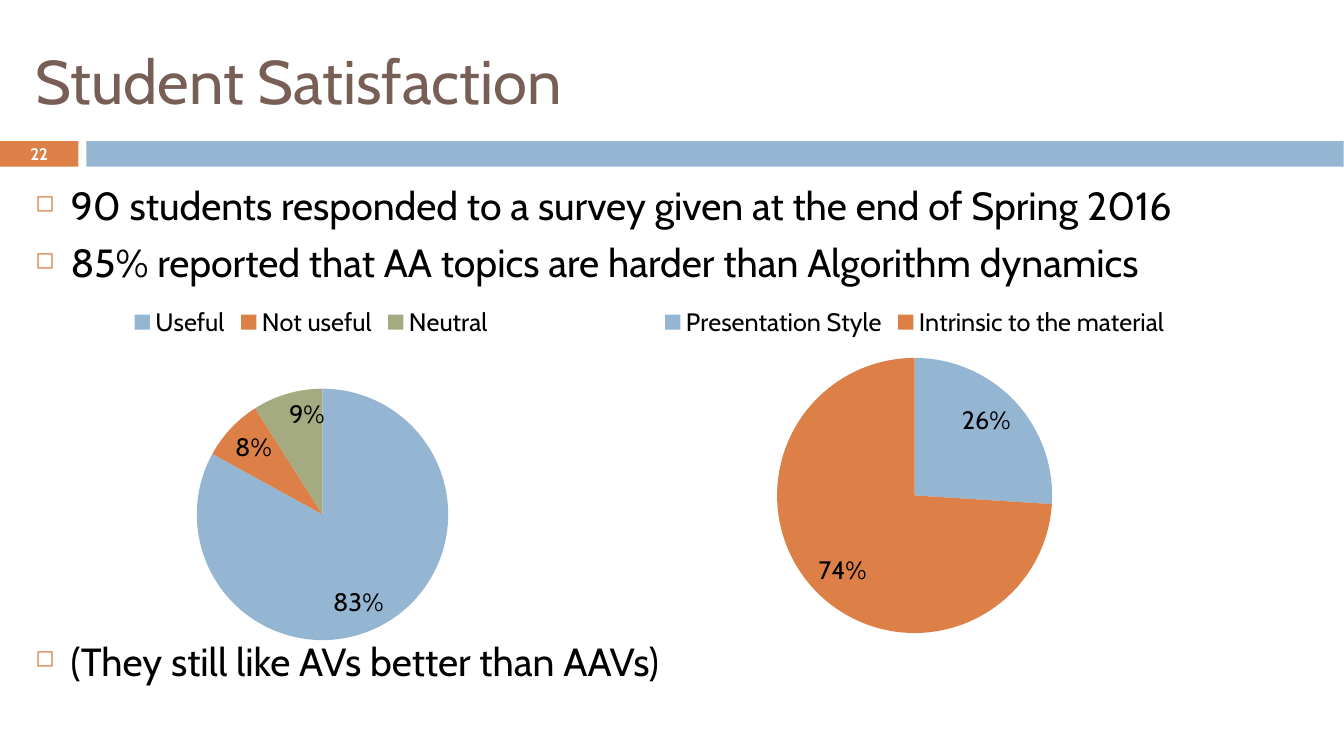
from lxml.etree import SubElement
from pptx import Presentation
from pptx.chart.data import CategoryChartData
from pptx.dml.color import RGBColor
from pptx.enum.chart import XL_CHART_TYPE, XL_LABEL_POSITION, XL_LEGEND_POSITION
from pptx.enum.shapes import MSO_SHAPE as Shape
from pptx.enum.text import MSO_ANCHOR as Anchor, PP_ALIGN as Align
from pptx.oxml import parse_xml
from pptx.oxml.ns import nsdecls, qn
from pptx.util import Cm, Pt

COLOURS = {
    "blue": "94B6D2",
    "orange": "DD8047",
    "green": "A5AB81",
    "brown": "775F55",
    "black": "000000",
    "white": "FFFFFF",
}
FONT = "Cabin"
MARGIN = 0.64
CHART_TOP = 7.42


def rgb(colour):
    """Return the named colour of the palette."""
    return RGBColor.from_string(COLOURS[colour])


def style(font, size, colour, bold=False):
    """Set typeface, size, colour and weight."""
    font.name, font.size, font.bold = FONT, Pt(size), bold
    font.color.rgb = rgb(colour)


def add_band(slide, left, width, colour):
    """Draw one part of the band under the title."""
    band = slide.shapes.add_shape(Shape.RECTANGLE, Cm(left), Cm(3.56), Cm(width), Cm(0.64))
    band.shadow.inherit = False
    band.fill.solid()
    band.fill.fore_color.rgb = rgb(colour)
    band.line.fill.background()


def add_text(slide, box, lines, size, colour, anchor=Anchor.TOP, bold=False):
    """Add a wrapping text box with one paragraph per line and return its frame."""
    frame = slide.shapes.add_textbox(*map(Cm, box)).text_frame
    frame.word_wrap = True
    frame.vertical_anchor = anchor
    frame.text = "\n".join(lines)
    for paragraph in frame.paragraphs:
        style(paragraph.font, size, colour, bold)
    return frame


def add_bullet(paragraph, space_before):
    """Give a paragraph a small hollow square and a hanging indent."""
    paragraph.space_before = Pt(space_before)
    properties = paragraph._p.get_or_add_pPr()
    properties.set("marL", str(Cm(0.89)))
    properties.set("indent", str(-Cm(0.89)))
    bullet_colour = SubElement(properties, qn("a:buClr"))
    SubElement(bullet_colour, qn("a:srgbClr"), val=COLOURS["orange"])
    SubElement(properties, qn("a:buSzPct"), val="60000")
    SubElement(properties, qn("a:buChar"), char="◻")


def place_plot(chart, plot_box):
    """Fix the pie inside its chart, in fractions of the chart's size."""
    plot_area = chart._chartSpace.chart.plotArea
    for layout in plot_area.findall(qn("c:layout")):
        plot_area.remove(layout)
    sides = "".join(f'<c:{side} val="{share}"/>' for side, share in zip("xywh", plot_box))
    plot_area.insert(0, parse_xml(
        f'<c:layout {nsdecls("c")}><c:manualLayout><c:layoutTarget val="inner"/>'
        f'<c:xMode val="edge"/><c:yMode val="edge"/>{sides}</c:manualLayout></c:layout>'))


def add_pie(slide, box, plot_box, shares):
    """Add a pie of survey shares with its legend on top."""
    survey = CategoryChartData()
    survey.categories = list(shares)
    survey.add_series("Series 1", list(shares.values()))
    chart = slide.shapes.add_chart(XL_CHART_TYPE.PIE, *map(Cm, box), survey).chart
    style(chart.font, 18, "black")
    chart.has_title = False
    chart.has_legend = True
    chart.legend.position = XL_LEGEND_POSITION.TOP
    chart.legend.include_in_layout = False
    pie = chart.plots[0]
    pie.vary_by_categories = True
    pie.has_data_labels = True
    labels = pie.data_labels
    labels.show_percentage, labels.show_value = True, False
    labels.number_format, labels.number_format_is_linked = "0%", False
    labels.position = XL_LABEL_POSITION.INSIDE_END
    style(labels.font, 18, "black")
    for index, colour in zip(range(len(shares)), ("blue", "orange", "green")):
        slice_fill = pie.series[0].points[index].format.fill
        slice_fill.solid()
        slice_fill.fore_color.rgb = rgb(colour)
    place_plot(chart, plot_box)


def main():
    """Build the survey slide and save it."""
    deck = Presentation()
    deck.slide_width, deck.slide_height = Cm(33.87), Cm(19.05)
    slide = deck.slides.add_slide(deck.slide_layouts[6])

    add_band(slide, 0, 1.98, "orange")
    add_band(slide, 2.18, 31.68, "blue")
    add_text(slide, (MARGIN, MARGIN, 31.83, 2.74), ["Student Satisfaction"],
             44, "brown", Anchor.MIDDLE)
    page_number = add_text(slide, (0, 3.53, 1.98, 0.69), ["22"],
                           12, "white", Anchor.MIDDLE, bold=True)
    page_number.paragraphs[0].alignment = Align.CENTER

    findings = add_text(slide, (MARGIN, 4.45, 32.59, 13.34), [
        "90 students responded to a survey given at the end of Spring 2016",
        "85% reported that AA topics are harder than Algorithm dynamics",
        "(They still like AVs better than AAVs)",
    ], 28, "black")
    for paragraph, space_before in zip(findings.paragraphs, (7, 7, 251)):
        add_bullet(paragraph, space_before)

    add_pie(slide, (MARGIN, CHART_TOP, 14.4, 9.09), (0.3, 0.26, 0.44, 0.7),
            {"Useful": 83, "Not useful": 8, "Neutral": 9})
    add_pie(slide, (11.2, CHART_TOP, 23.7, 8.89), (0.35, 0.18, 0.3, 0.78),
            {"Presentation Style": 26, "Intrinsic to the material": 74})
    deck.save("out.pptx")


if __name__ == "__main__":
    main()
